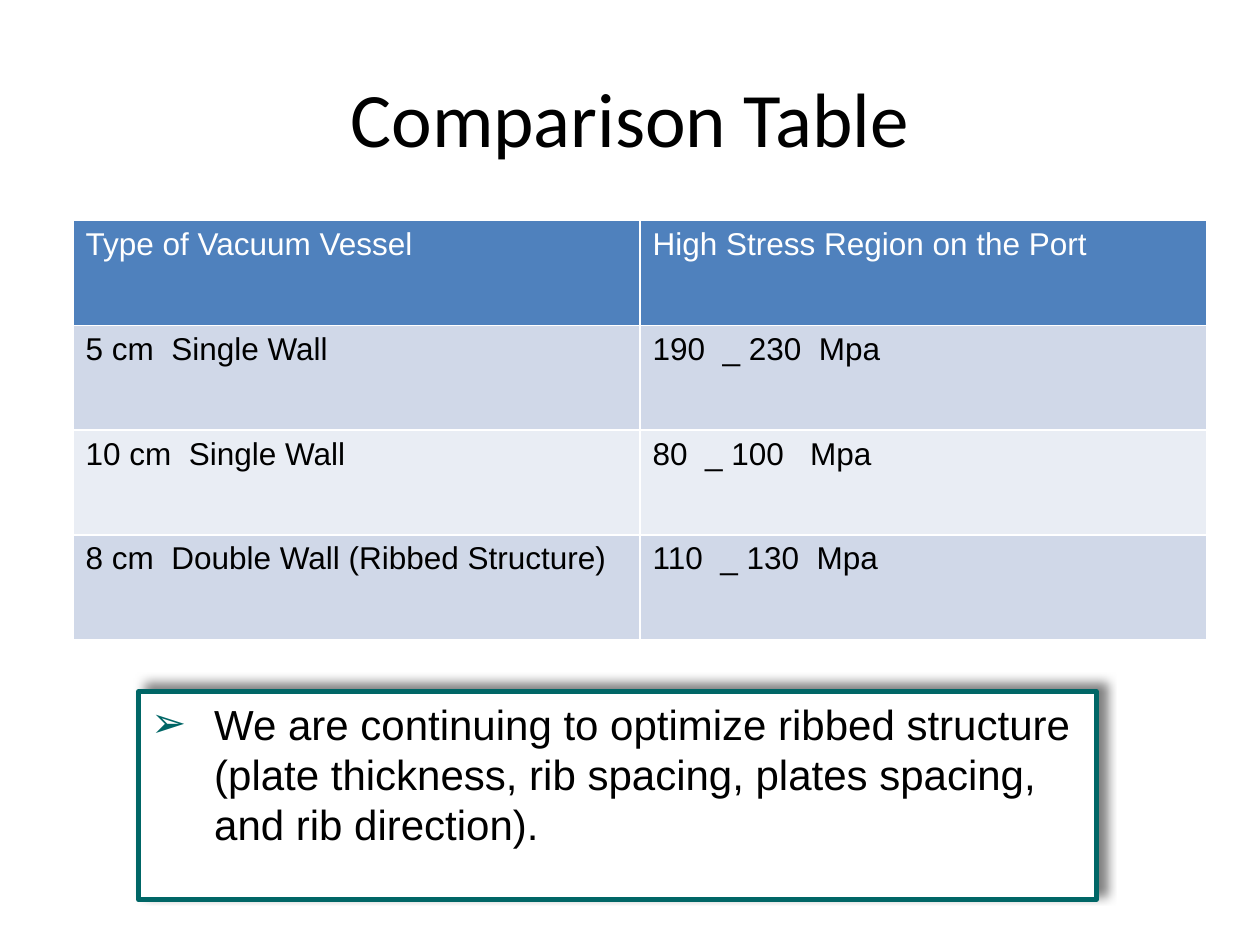
import pptx
import pptx.util
import pptx.dml.color
import pptx.enum.text
import pptx.oxml
import pptx.oxml.ns

Inches = pptx.util.Inches
Pt = pptx.util.Pt
NS = pptx.oxml.ns.nsdecls("a")


def color(code):
    return pptx.dml.color.RGBColor.from_string(code)


class Deck:
    ink = "000000"
    white = "FFFFFF"
    teal = "006666"
    head = "4F81BD"
    bands = ("D0D8E8", "E9EDF4")

    def __init__(self):
        self.prs = pptx.Presentation()
        self.prs.slide_width = Inches(10)
        self.prs.slide_height = Inches(7.5)
        self.slide = self.prs.slides.add_slide(self.prs.slide_layouts[1])

    def place(self, shape, left, top, width, height):
        shape.left, shape.top = Inches(left), Inches(top)
        shape.width, shape.height = Inches(width), Inches(height)

    def add_text(self, para, text, size, font="Arial", ink=ink):
        run = para.add_run()
        run.text = text
        run.font.size = Pt(size)
        run.font.name = font
        run.font.bold = False
        run.font.color.rgb = color(ink)

    def title(self, text, *box):
        shape = self.slide.shapes.title
        self.place(shape, *box)
        para = shape.text_frame.paragraphs[0]
        para.alignment = pptx.enum.text.PP_ALIGN.CENTER
        self.add_text(para, text, 44, "Calibri")

    def table(self, rows, *box):
        sizes = [Inches(n) for n in box]
        grid = self.slide.shapes.add_table(len(rows), len(rows[0]), *sizes).table
        for r, row in enumerate(rows):
            fill = self.bands[(r - 1) % 2] if r else self.head
            for c, text in enumerate(row):
                cell = grid.cell(r, c)
                cell.fill.solid()
                cell.fill.fore_color.rgb = color(fill)
                ink = self.ink if r else self.white
                self.add_text(cell.text_frame.paragraphs[0], text, 18, ink=ink)

    def shadow(self, shape):
        shape._element.spPr.append(pptx.oxml.parse_xml(
            f'<a:effectLst {NS}><a:outerShdw blurRad="{Pt(6)}" dist="{Pt(6)}" '
            f'dir="{315 * 60000}" algn="bl" rotWithShape="0">'
            f'<a:srgbClr val="{self.ink}"><a:alpha val="50000"/></a:srgbClr>'
            '</a:outerShdw></a:effectLst>'))

    def bullet(self, para):
        props = para._p.get_or_add_pPr()
        props.set("marL", str(Inches(0.5)))
        props.set("indent", str(Inches(-0.5)))
        for tag in (f'<a:buClr {NS}><a:srgbClr val="{self.teal}"/></a:buClr>',
                    f'<a:buChar {NS} char="➢"/>'):
            props.append(pptx.oxml.parse_xml(tag))

    def notice(self, items, *box):
        shape = self.slide.placeholders[1]
        self.place(shape, *box)
        shape.fill.solid()
        shape.fill.fore_color.rgb = color(self.white)
        shape.line.color.rgb = color(self.teal)
        shape.line.width = Pt(3)
        self.shadow(shape)
        frame = shape.text_frame
        frame.auto_size = pptx.enum.text.MSO_AUTO_SIZE.NONE
        frame.word_wrap = True
        for i, text in enumerate(items):
            para = frame.add_paragraph() if i else frame.paragraphs[0]
            self.bullet(para)
            self.add_text(para, text, 24)


def main():
    deck = Deck()
    deck.title("Comparison Table", 0.5, 0.3, 9, 1.25)
    deck.table([
        ("Type of Vacuum Vessel", "High Stress Region on the Port"),
        ("5 cm  Single Wall", "190  _ 230  Mpa"),
        ("10 cm  Single Wall", "80  _ 100   Mpa"),
        ("8 cm  Double Wall (Ribbed Structure)", "110  _ 130  Mpa"),
    ], 0.58, 1.75, 9, 3.33)
    deck.notice([
        "We are continuing to optimize ribbed structure (plate thickness, "
        "rib spacing, plates spacing, and rib direction).",
    ], 1.1, 5.49, 7.6, 1.65)
    deck.prs.save("out.pptx")


if __name__ == "__main__":
    main()
